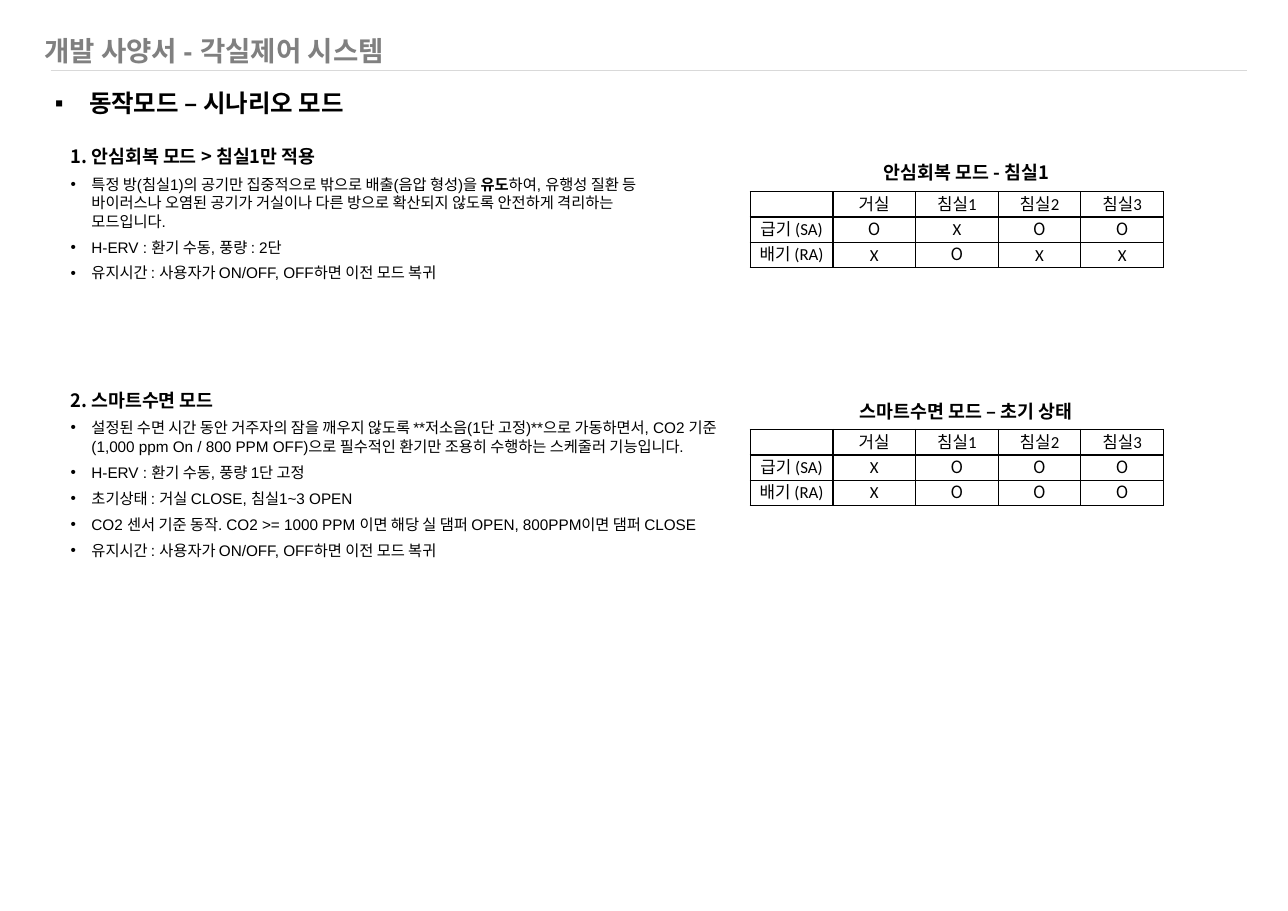
from lxml import etree
from pptx import Presentation
from pptx.dml.color import RGBColor
from pptx.enum.shapes import MSO_CONNECTOR, MSO_SHAPE
from pptx.enum.text import MSO_ANCHOR, MSO_AUTO_SIZE, PP_ALIGN
from pptx.oxml.ns import qn
from pptx.util import Inches, Pt

LEFT, CENTER = PP_ALIGN.LEFT, PP_ALIGN.CENTER
TOP, MIDDLE, BOTTOM = MSO_ANCHOR.TOP, MSO_ANCHOR.MIDDLE, MSO_ANCHOR.BOTTOM
NO_AUTOFIT = MSO_AUTO_SIZE.NONE
STRAIGHT, RECTANGLE = MSO_CONNECTOR.STRAIGHT, MSO_SHAPE.RECTANGLE

BLACK = RGBColor(0x00, 0x00, 0x00)
GRAY = RGBColor(0x80, 0x80, 0x80)
LIGHT_GRAY = RGBColor(0xD9, 0xD9, 0xD9)
WHITE = RGBColor(0xFF, 0xFF, 0xFF)

ARIAL, CALIBRI, KOREAN = "Arial", "Calibri", "Noto Sans CJK KR"
LINE_RATIO = 1.2
TWO_CONTENT_LAYOUT = 3
ROOMS = ["", "거실", "침실1", "침실2", "침실3"]
RETURN_TO_MODE = "유지시간 : 사용자가 ON/OFF, OFF하면 이전 모드 복귀"

# Text between two bars is bold.
MODES = [
    {
        "heading": "1. 안심회복 모드 > 침실1만 적용",
        "bullets": [
            "특정 방(침실1)의 공기만 집중적으로 밖으로 배출(음압 형성)을 |유도|하여, "
            "유행성 질환 등 바이러스나 오염된 공기가 거실이나 다른 방으로 "
            "확산되지 않도록 안전하게 격리하는 모드입니다.",
            "H-ERV : 환기 수동, 풍량 : 2단",
            RETURN_TO_MODE,
        ],
        "area": (0.54, 1.27, 5.42, 1.4),
        "caption": "안심회복 모드 - 침실1",
        "caption_top": 1.42,
        "dampers": ["OXOO", "XOXX"],
        "table_top": 1.74,
    },
    {
        "heading": "2. 스마트수면 모드",
        "bullets": [
            "설정된 수면 시간 동안 거주자의 잠을 깨우지 않도록 **저소음(1단 고정)**으로 "
            "가동하면서, CO2 기준(1,000 ppm On / 800 PPM OFF)으로 필수적인 환기만 "
            "조용히 수행하는 스케줄러 기능입니다.",
            "H-ERV : 환기 수동, 풍량 1단 고정",
            "초기상태 : 거실 CLOSE, 침실1~3 OPEN",
            "CO2 센서 기준 동작. CO2 >= 1000 PPM 이면 해당 실 댐퍼 OPEN, "
            "800PPM이면 댐퍼 CLOSE",
            RETURN_TO_MODE,
        ],
        "area": (0.54, 3.48, 6.19, 1.9),
        "caption": "스마트수면 모드 – 초기 상태",
        "caption_top": 3.59,
        "dampers": ["XOOO", "XOOO"],
        "table_top": 3.9,
    },
]


class SpecificationPage:
    """Draws the elements of one page in a shared style."""

    def __init__(self, deck):
        self.page = deck.slides.add_slide(deck.slide_layouts[TWO_CONTENT_LAYOUT])

    def place(self, box, area, anchor=TOP):
        box.left, box.top, box.width, box.height = map(Inches, area)
        frame = box.text_frame
        frame.word_wrap = True
        frame.auto_size = NO_AUTOFIT
        frame.vertical_anchor = anchor
        return frame

    def set_bullet(self, para, symbol, indent):
        """Give the paragraph a hanging bullet, or none if symbol is empty."""
        properties = para._p.get_or_add_pPr()
        properties.set("marL", str(Inches(indent)))
        properties.set("indent", str(-Inches(indent)))
        if symbol:
            etree.SubElement(properties, qn("a:buFont"), typeface=ARIAL)
            etree.SubElement(properties, qn("a:buChar"), char=symbol)
        else:
            etree.SubElement(properties, qn("a:buNone"))

    def fill_paragraph(self, para, text, size, font, bold=False, color=BLACK,
                       align=LEFT, before=0):
        para.alignment = align
        para.line_spacing = Pt(size * LINE_RATIO)
        para.space_before = Pt(before)
        for index, part in enumerate(text.split("|")):
            span = para.add_run()
            span.text = part
            span.font.size = Pt(size)
            span.font.bold = bold or index % 2 == 1
            span.font.color.rgb = color
            span.font.name = font
            etree.SubElement(span._r.get_or_add_rPr(), qn("a:ea"), typeface=KOREAN)

    def add_title(self, text):
        frame = self.place(self.page.shapes.title, (0.3, 0.26, 3.78, 0.4), BOTTOM)
        self.fill_paragraph(frame.paragraphs[0], text, 18, ARIAL, True, GRAY)

    def add_rule(self):
        line = self.page.shapes.add_connector(
            STRAIGHT, Inches(0.46), Inches(0.64), Inches(11.32), Inches(0.64))
        line.line.color.rgb = LIGHT_GRAY
        line.line.width = Pt(0.5)
        etree.SubElement(line._element.spPr, qn("a:effectLst"))

    def add_section(self, text):
        area = (0.4, 0.75, 10.81, 0.37)
        box = self.page.shapes.add_textbox(*map(Inches, area))
        para = self.place(box, area).paragraphs[0]
        self.set_bullet(para, "▪", 0.31)
        self.fill_paragraph(para, text, 16, CALIBRI, True)

    def add_mode_list(self, number, heading, bullets, area):
        frame = self.place(self.page.placeholders[number], area)
        para = frame.paragraphs[0]
        self.set_bullet(para, "", 0)
        self.fill_paragraph(para, heading, 12, KOREAN, True)
        for text in bullets:
            para = frame.add_paragraph()
            self.set_bullet(para, "•", 0.19)
            self.fill_paragraph(para, text, 10, ARIAL, before=5)

    def add_caption(self, text, top):
        area = (7.39, top, 2.76, 0.28)
        box = self.page.shapes.add_shape(RECTANGLE, *map(Inches, area))
        box.shadow.inherit = False
        box.fill.solid()
        box.fill.fore_color.rgb = WHITE
        box.line.fill.background()
        frame = self.place(box, area, MIDDLE)
        frame.margin_left = frame.margin_right = Inches(0.04)
        frame.margin_top = frame.margin_bottom = Inches(0.04)
        self.fill_paragraph(frame.paragraphs[0], text, 12, KOREAN, True, align=CENTER)

    def add_borders(self, cell):
        properties = cell._tc.get_or_add_tcPr()
        for position, side in enumerate(("lnL", "lnR", "lnT", "lnB")):
            border = etree.Element(qn("a:" + side), w=str(Pt(1)))
            fill = etree.SubElement(border, qn("a:solidFill"))
            etree.SubElement(fill, qn("a:srgbClr"), val=str(BLACK))
            properties.insert(position, border)

    def add_damper_table(self, dampers, top):
        rows = [ROOMS, ["급기 (SA)", *dampers[0]], ["배기 (RA)", *dampers[1]]]
        table = self.page.shapes.add_table(
            len(rows), len(ROOMS), Inches(6.81), Inches(top), Inches(3.75), Inches(0.69)).table
        for row, texts in zip(table.rows, rows):
            row.height = Inches(0.23)
            for cell, text in zip(row.cells, texts):
                cell.fill.background()
                self.add_borders(cell)
                cell.vertical_anchor = MIDDLE
                cell.margin_left = cell.margin_right = cell.margin_top = Inches(0.01)
                cell.margin_bottom = 0
                para = cell.text_frame.paragraphs[0]
                if text:
                    font = KOREAN if text == "O" else CALIBRI
                    self.fill_paragraph(para, text, 11, font, align=CENTER)
                else:
                    para.line_spacing = Pt(11 * LINE_RATIO)
                    etree.SubElement(para._p, qn("a:endParaRPr"), sz="1100")


def main():
    deck = Presentation()
    deck.slide_width, deck.slide_height = Inches(11.69), Inches(8.27)
    page = SpecificationPage(deck)
    page.add_rule()
    page.add_title("개발 사양서 - 각실제어 시스템")
    page.add_section("동작모드 – 시나리오 모드")
    for number, mode in enumerate(MODES, start=1):
        page.add_mode_list(number, mode["heading"], mode["bullets"], mode["area"])
        page.add_damper_table(mode["dampers"], mode["table_top"])
        page.add_caption(mode["caption"], mode["caption_top"])
    deck.save("out.pptx")


if __name__ == "__main__":
    main()
